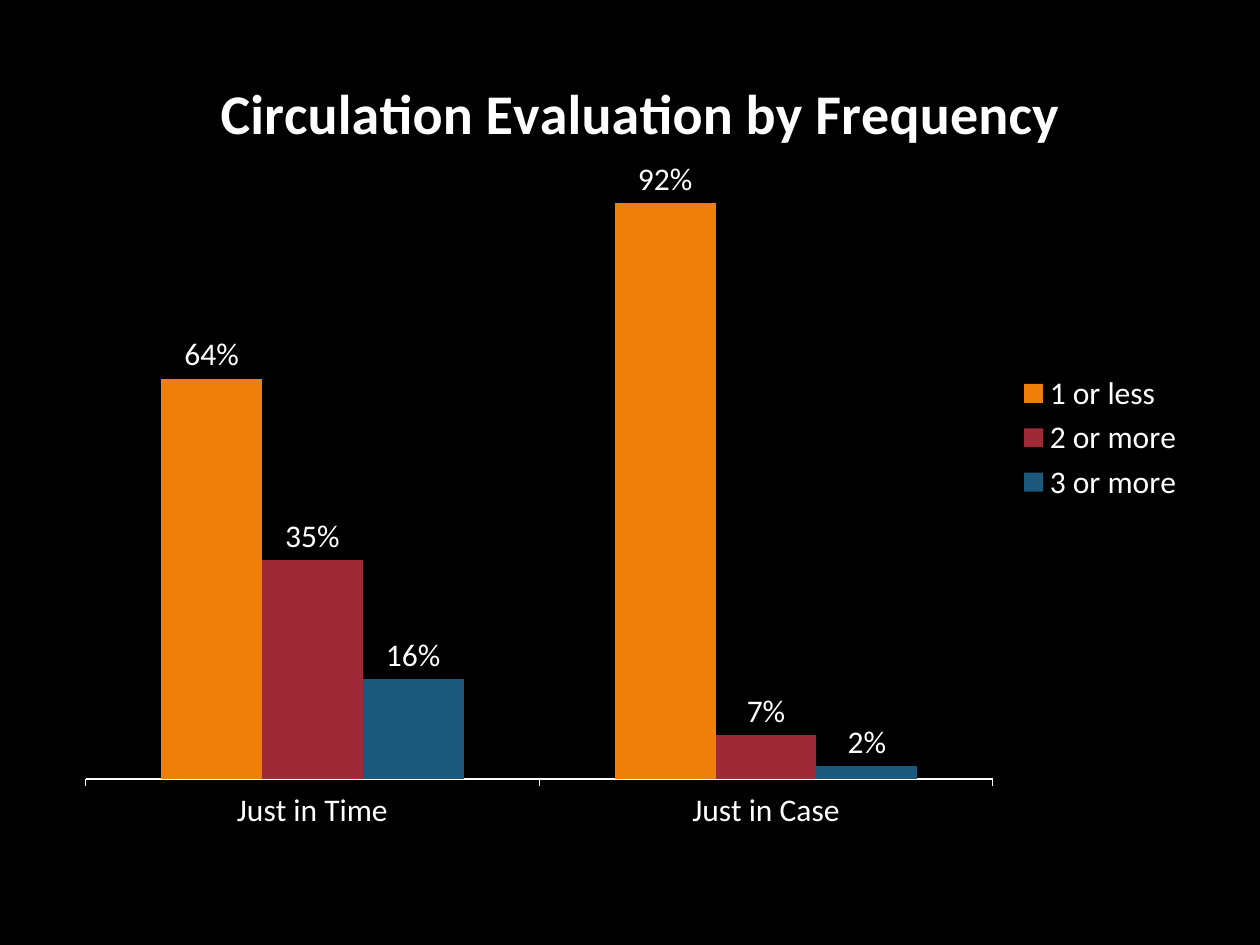
from dataclasses import dataclass

from lxml.etree import SubElement
from pptx import Presentation
from pptx.chart.chart import Chart
from pptx.chart.data import CategoryChartData
from pptx.dml.color import RGBColor
from pptx.enum.chart import XL_CHART_TYPE as ChartType
from pptx.enum.chart import XL_LABEL_POSITION as LabelPosition
from pptx.enum.chart import XL_LEGEND_POSITION as LegendPosition
from pptx.enum.chart import XL_TICK_MARK as TickMark
from pptx.oxml.ns import qn
from pptx.util import Inches, Pt

FONT = "Calibri"
WHITE = "FFFFFF"
PERCENT = "0%"


@dataclass
class Frequency:
    name: str
    shares: tuple[float, ...]
    color: str


CATEGORIES = ("Just in Time", "Just in Case")
FREQUENCIES = (
    Frequency("1 or less", (0.64, 0.92), "F07F09"),
    Frequency("2 or more", (0.35, 0.07), "9F2936"),
    Frequency("3 or more", (0.16, 0.02), "1B587C"),
)


def paint(color_format, color: str) -> None:
    color_format.rgb = RGBColor.from_string(color)


def fill(target, color: str) -> None:
    target.fill.solid()
    paint(target.fill.fore_color, color)


def style_font(font, size: int, bold: bool = False) -> None:
    font.name, font.size, font.bold = FONT, Pt(size), bold
    paint(font.color, WHITE)


def place(element, after: str | None, **fractions: float) -> None:
    """Fix a chart part at fractions of the chart's width and height."""
    for old in element.findall(qn("c:layout")):
        element.remove(old)
    layout = SubElement(element, qn("c:layout"))
    manual = SubElement(layout, qn("c:manualLayout"))
    if "w" in fractions:
        SubElement(manual, qn("c:layoutTarget")).set("val", "inner")
    for mode in ("xMode", "yMode"):
        SubElement(manual, qn(f"c:{mode}")).set("val", "edge")
    for key, value in fractions.items():
        SubElement(manual, qn(f"c:{key}")).set("val", str(value))
    if after:
        element.find(qn(after)).addnext(layout)
    else:
        element.insert(0, layout)


def style_axes(chart: Chart) -> None:
    category_axis = chart.category_axis
    category_axis.major_tick_mark = TickMark.OUTSIDE
    category_axis.has_major_gridlines = False
    paint(category_axis.format.line.color, WHITE)
    category_axis.format.line.width = Pt(0.75)

    share_axis = chart.value_axis
    share_axis.minimum_scale, share_axis.maximum_scale = 0, 1
    share_axis.has_major_gridlines = False
    share_axis.tick_labels.number_format = PERCENT
    share_axis.tick_labels.number_format_is_linked = False
    share_axis.visible = False


def style_columns(chart: Chart) -> None:
    plot = chart.plots[0]
    plot.gap_width, plot.overlap = 150, 0
    plot.vary_by_categories = False
    for series, frequency in zip(plot.series, FREQUENCIES):
        fill(series.format, frequency.color)
        labels = series.data_labels
        labels.show_value = True
        labels.number_format = PERCENT
        labels.number_format_is_linked = False
        labels.position = LabelPosition.OUTSIDE_END
        style_font(labels.font, 18)


def main() -> None:
    presentation = Presentation()
    presentation.slide_width, presentation.slide_height = Inches(10), Inches(7.5)
    slide = presentation.slides.add_slide(presentation.slide_layouts[6])
    fill(slide.background, "000000")

    # Circulation chart
    circulation = CategoryChartData(number_format=PERCENT)
    circulation.categories = CATEGORIES
    for frequency in FREQUENCIES:
        circulation.add_series(frequency.name, frequency.shares)
    chart = slide.shapes.add_chart(
        ChartType.COLUMN_CLUSTERED,
        Inches(0.5), Inches(0.25), Inches(9), Inches(6.45), circulation,
    ).chart
    style_font(chart.font, 18)
    style_axes(chart)
    style_columns(chart)

    # Title
    chart.has_title = True
    title = chart.chart_title
    title.include_in_layout = False
    title.text_frame.text = "Circulation Evaluation by Frequency"
    style_font(title.text_frame.paragraphs[0].font, 32, bold=True)
    place(title._element, "c:tx", x=0.13, y=0.04)

    # Legend and plot area
    chart.has_legend = True
    chart.legend.position = LegendPosition.RIGHT
    chart.legend.include_in_layout = False
    style_font(chart.legend.font, 18)
    plot_area = chart._chartSpace.chart.plotArea
    place(plot_area, None, x=0.02, y=0.15, w=0.8, h=0.77)

    presentation.save("out.pptx")


if __name__ == "__main__":
    main()
